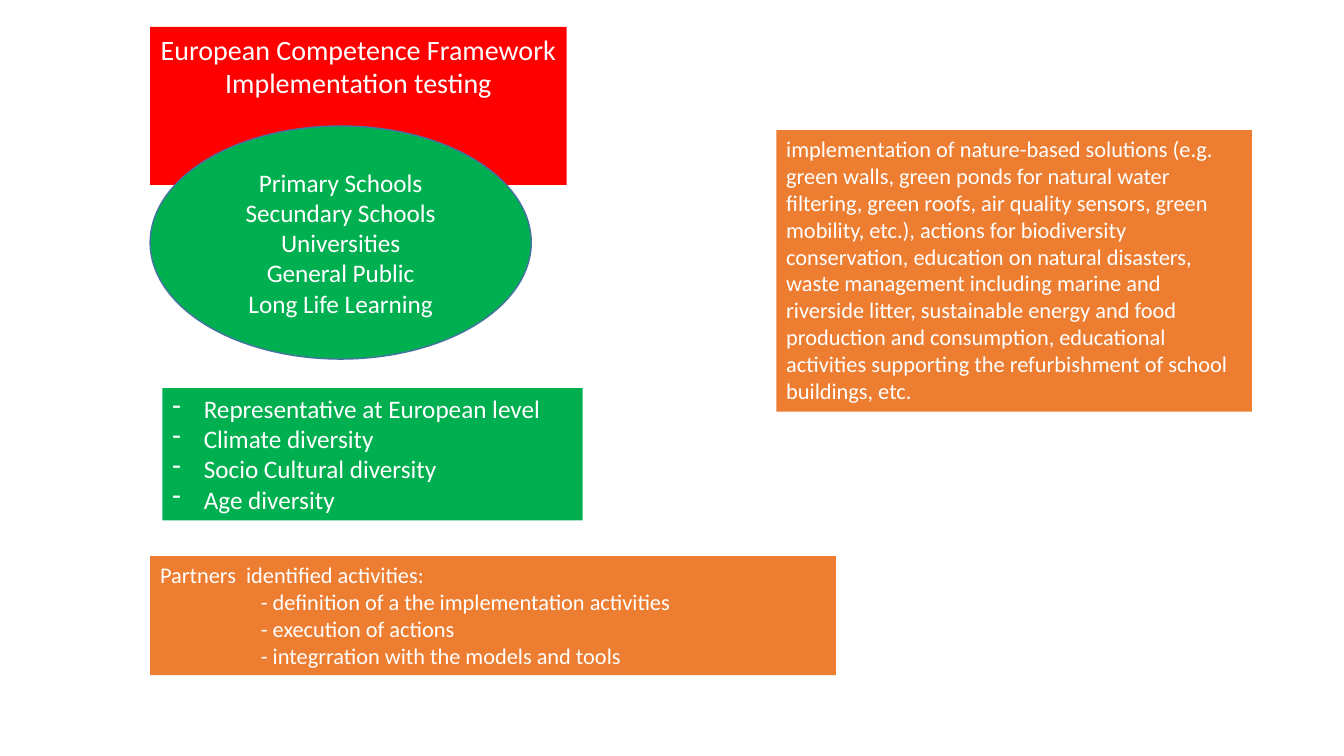
from lxml import etree
from pptx import Presentation
from pptx import util as u
from pptx.dml.color import RGBColor
from pptx.enum import shapes, text
from pptx.oxml.ns import qn

COLORS = {"red": "FF0000", "green": "00B050", "orange": "ED7D31",
          "outline": "43739E", "white": "FFFFFF"}
LEFT = 107.25


def rgb(name):
    return RGBColor.from_string(COLORS[name])


def fill_box(sp, box, color, lines, size, align):
    """Place and fill a shape, then set its lines of white text."""
    sp.left, sp.top, sp.width, sp.height = (u.Pt(v) for v in box)
    sp.fill.solid()
    sp.fill.fore_color.rgb = rgb(color)
    tf = sp.text_frame
    tf.word_wrap = True
    tf.vertical_anchor = text.MSO_ANCHOR.TOP
    tf.text = "\n".join(lines)
    for p in tf.paragraphs:
        p.alignment = align
        p.line_spacing = 1.0
        for r in p.runs:
            r.font.name = "Calibri"
            r.font.size = u.Pt(size)
            r.font.color.rgb = rgb("white")
    return tf


prs = Presentation()
prs.slide_width, prs.slide_height = u.Pt(960), u.Pt(540)
s = prs.slides.add_slide(prs.slide_layouts.get_by_name("Title Only"))
center, left = text.PP_ALIGN.CENTER, text.PP_ALIGN.LEFT

# Title
tf = fill_box(s.shapes.title, (LEFT, 19.25, 297.5, 55.75), "red",
              ["European Competence Framework Implementation testing"], 20, center)
tf.auto_size = text.MSO_AUTO_SIZE.SHAPE_TO_FIT_TEXT

# Audiences
audiences = s.shapes.add_shape(shapes.MSO_SHAPE.OVAL, 0, 0, 0, 0)
audiences.shadow.inherit = False
audiences.line.color.rgb = rgb("outline")
audiences.line.width = u.Pt(1)
tf = fill_box(audiences, (LEFT, 90, 272.25, 166.5), "green",
              ["Primary Schools", "Secundary Schools", "Universities",
               "General Public", "Long Life Learning"], 18, center)
tf.vertical_anchor = text.MSO_ANCHOR.MIDDLE

# Text boxes
diversity = ["Representative at European level", "Climate diversity",
             "Socio Cultural diversity", "Age diversity"]
solutions = [
    "implementation of nature-based solutions (e.g. green walls, green ponds "
    "for natural water filtering, green roofs, air quality sensors, green "
    "mobility, etc.), actions for biodiversity conservation, education on "
    "natural disasters, waste management including marine and riverside "
    "litter, sustainable energy and food production and consumption, "
    "educational activities supporting the refurbishment of school "
    "buildings, etc."]
activities = ["Partners  identified activities:",
              "- definition of a the implementation activities",
              "- execution of actions",
              "- integrration with the models and tools"]
frames = []
for box, color, lines, size in [
    ((116, 277.25, 300.25, 94.5), "green", diversity, 18),
    ((554.5, 93, 339.75, 201), "orange", solutions, 16),
    ((LEFT, 397.25, 489.75, 85), "orange", activities, 16),
]:
    tf = fill_box(s.shapes.add_textbox(0, 0, 0, 0), box, color, lines, size, left)
    tf.auto_size = text.MSO_AUTO_SIZE.SHAPE_TO_FIT_TEXT
    frames.append(tf)
diversity_tf, solutions_tf, activities_tf = frames

# Dash bullets with a hanging indent
for p in diversity_tf.paragraphs:
    pPr = p._p.get_or_add_pPr()
    pPr.set("marL", str(u.Pt(22.5)))
    pPr.set("indent", str(u.Pt(-22.5)))
    etree.SubElement(pPr, qn("a:buFontTx"))
    etree.SubElement(pPr, qn("a:buChar")).set("char", "-")

# Activities sit one inch in from their heading
for p in activities_tf.paragraphs[1:]:
    p._p.get_or_add_pPr().set("marL", str(u.Pt(72)))

prs.save("out.pptx")
